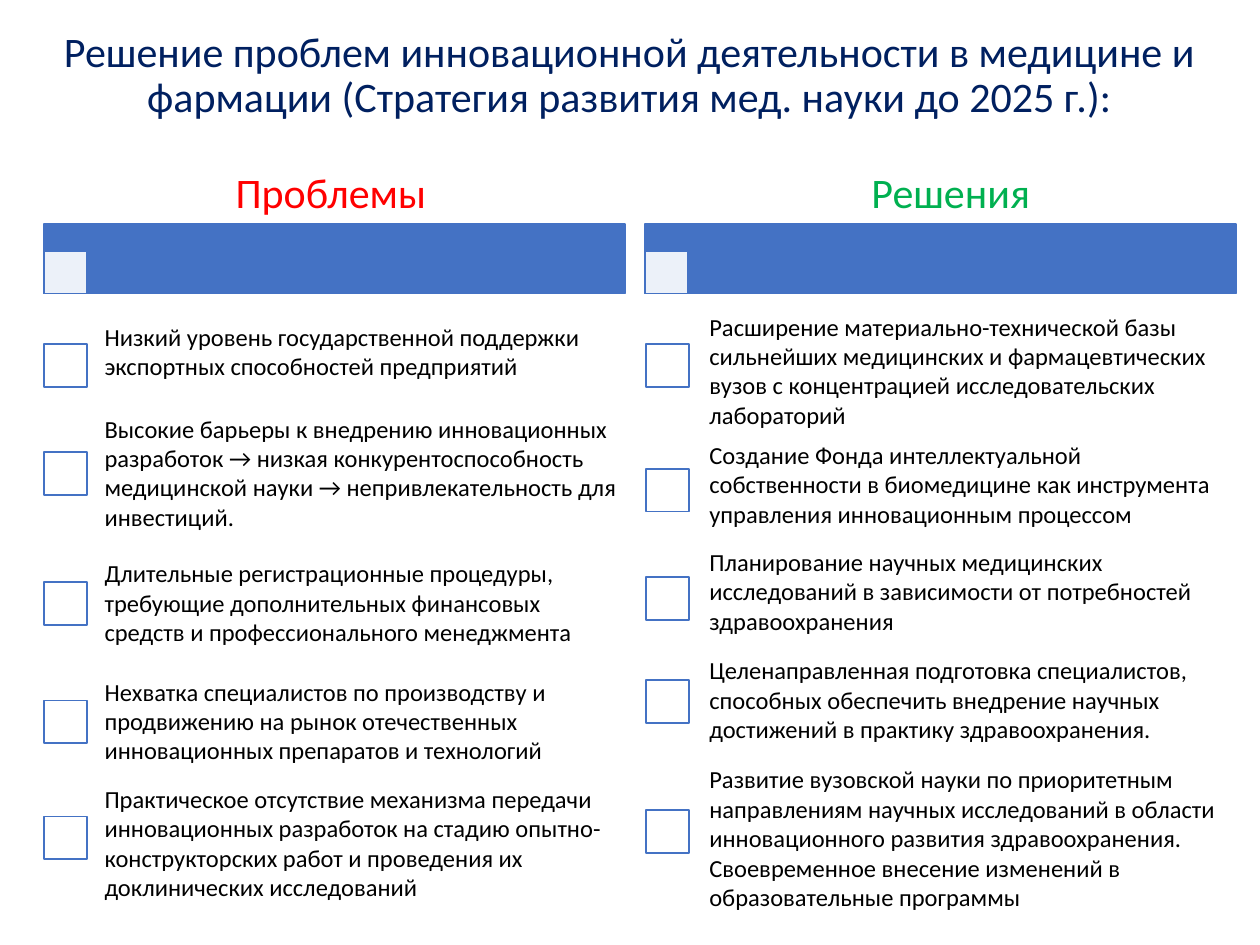
from dataclasses import dataclass

import pptx
import pptx.dml.color
import pptx.enum.shapes
import pptx.enum.text
import pptx.util
from lxml import etree
from pptx.oxml.ns import qn


@dataclass(frozen=True)
class Theme:
    font: str = "Calibri"
    heading_size: int = 24
    body_size: int = 14
    title: str = "002060"
    problems: str = "FF0000"
    solutions: str = "00B050"
    body: str = "000000"
    accent: str = "4472C4"
    paper: str = "FFFFFF"


@dataclass(frozen=True)
class Area:
    """Place on the slide grid: left and width in columns, top and height in rows."""
    left: float
    top: float
    width: float
    height: float


@dataclass(frozen=True)
class Item:
    text: str
    box_top: float
    text_top: float
    text_height: float = 8


@dataclass(frozen=True)
class Column:
    heading: str
    color: str
    heading_left: float
    bar_left: float
    bar_width: float
    box_left: float
    text_left: float
    items: tuple[Item, ...]


THEME = Theme()
# The grid has 100 columns and 75 rows of square cells
CELL = pptx.util.Inches(10) // 100
BOX_SIDE = 3.4
BAR_TOP, BAR_HEIGHT = 17.8, 5.5
HEADING_TOP, HEADING_WIDTH, HEADING_HEIGHT = 13.1, 46.9, 4.7
TEXT_WIDTH = 43.6

TITLE = ("Решение проблем инновационной деятельности в медицине и фармации "
         "(Стратегия развития мед. науки до 2025 г.):")

COLUMNS = (
    Column("Проблемы", THEME.problems, 2.8, 3.5, 46.1, 3.5, 7.2, (
        Item("Низкий уровень государственной поддержки экспортных способностей "
             "предприятий", 27.3, 24.1, 7.6),
        Item("Высокие барьеры к внедрению инновационных разработок → низкая "
             "конкурентоспособность медицинской науки → непривлекательность "
             "для инвестиций.", 35.9, 33.5),
        Item("Длительные регистрационные процедуры, требующие дополнительных "
             "финансовых средств и профессионального менеджмента", 46.2, 43.8),
        Item("Нехватка специалистов по производству и продвижению на рынок "
             "отечественных инновационных препаратов и технологий", 55.6, 53.2),
        Item("Практическое отсутствие механизма передачи инновационных "
             "разработок на стадию опытно-конструкторских работ и проведения "
             "их доклинических исследований", 64.8, 62.9),
    )),
    Column("Решения", THEME.solutions, 52, 51.2, 46.9, 51.3, 55.2, (
        Item("Расширение материально-технической базы сильнейших медицинских и "
             "фармацевтических вузов с концентрацией исследовательских "
             "лабораторий", 27.3, 24.1, 10.6),
        Item("Создание Фонда интеллектуальной собственности в биомедицине как "
             "инструмента управления инновационным процессом", 37.2, 34.4),
        Item("Планирование научных медицинских исследований в зависимости от "
             "потребностей здравоохранения", 45.8, 42.9),
        Item("Целенаправленная подготовка специалистов, способных обеспечить "
             "внедрение научных достижений в практику здравоохранения.",
             54, 51.5),
        Item("Развитие вузовской науки по приоритетным направлениям научных "
             "исследований в области инновационного развития здравоохранения. "
             "Своевременное внесение изменений в образовательные программы",
             64.3, 62.5),
    )),
)


def place(area: Area) -> list[int]:
    return [round(n * CELL) for n in (area.left, area.top, area.width, area.height)]


def add_box(slide, area: Area, fill: str, opacity: int = 100) -> None:
    box = slide.shapes.add_shape(pptx.enum.shapes.MSO_SHAPE.RECTANGLE, *place(area))
    box.shadow.inherit = False
    box.fill.solid()
    box.fill.fore_color.rgb = pptx.dml.color.RGBColor.from_string(fill)
    box.line.color.rgb = pptx.dml.color.RGBColor.from_string(THEME.accent)
    box.line.width = pptx.util.Pt(1)
    if opacity < 100:
        tint = box.fill._xPr.find(qn("a:solidFill"))[0]
        etree.SubElement(tint, qn("a:alpha"), val=str(opacity * 1000))


def add_text(slide, area: Area, text: str, size: int, color: str,
             insets: tuple[float, float], heading: bool = False) -> None:
    frame = slide.shapes.add_textbox(*place(area)).text_frame
    frame.word_wrap = True
    frame.vertical_anchor = pptx.enum.text.MSO_ANCHOR.MIDDLE
    frame.margin_left = frame.margin_right = pptx.util.Inches(insets[0])
    frame.margin_top = frame.margin_bottom = pptx.util.Inches(insets[1])
    frame.text = text
    paragraph = frame.paragraphs[0]
    if heading:
        paragraph.alignment = pptx.enum.text.PP_ALIGN.CENTER
        paragraph.line_spacing = 0.9
    font = paragraph.runs[0].font
    font.name = THEME.font
    font.size = pptx.util.Pt(size)
    font.color.rgb = pptx.dml.color.RGBColor.from_string(color)


def add_column(slide, column: Column) -> None:
    # Heading over a bar with a pale box in its lower corner
    add_box(slide, Area(column.bar_left, BAR_TOP, column.bar_width, BAR_HEIGHT),
            THEME.accent)
    add_box(slide, Area(column.bar_left, BAR_TOP + BAR_HEIGHT - BOX_SIDE,
                        BOX_SIDE, BOX_SIDE), THEME.paper, opacity=90)
    add_text(slide, Area(column.heading_left, HEADING_TOP, HEADING_WIDTH,
                         HEADING_HEIGHT), column.heading, THEME.heading_size,
             column.color, (0.05, 0.03), heading=True)

    # Checklist
    for item in column.items:
        add_box(slide, Area(column.box_left, item.box_top, BOX_SIDE, BOX_SIDE),
                THEME.paper)
        add_text(slide, Area(column.text_left, item.text_top, TEXT_WIDTH,
                             item.text_height), item.text, THEME.body_size,
                 THEME.body, (0.11, 0.11))


def main() -> None:
    deck = pptx.Presentation()
    deck.slide_width, deck.slide_height = 100 * CELL, 75 * CELL
    slide = deck.slides.add_slide(deck.slide_layouts[6])
    for column in COLUMNS:
        add_column(slide, column)
    add_text(slide, Area(3.5, 2.1, 92.9, 7.9), TITLE, THEME.heading_size,
             THEME.title, (0.1, 0.05), heading=True)
    deck.save("out.pptx")


if __name__ == "__main__":
    main()
